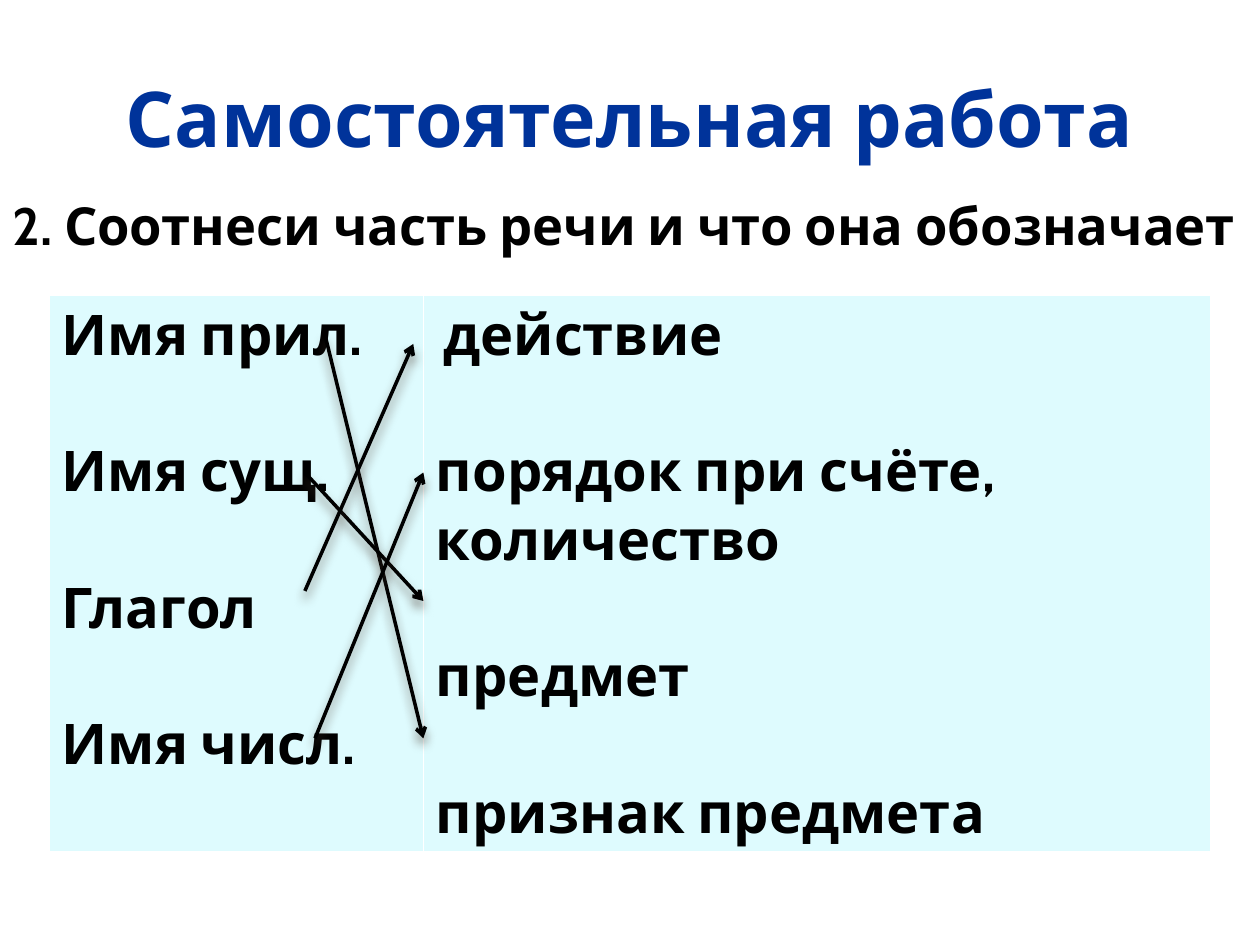
import pptx
import pptx.util
import pptx.dml.color
import pptx.enum.shapes
import pptx.enum.text
import pptx.oxml
import pptx.oxml.ns
from pptx.util import Inches, Pt

TITLE = "Самостоятельная работа"
TASK = "2. Соотнеси часть речи и что она обозначает"
COLUMNS = [
    (2.97, ["Имя прил.", "Имя сущ.", "Глагол", "Имя числ."]),
    (6.25, ["действие", "порядок при счёте, количество", "предмет", "признак предмета"]),
]
FIRST_MEANING_INDENT = 0.06
TABLE_LEFT, TABLE_TOP, TABLE_HEIGHT = 0.39, 2.34, 3.83
ARROWS = [  # from, to
    ((2.58, 2.66), (3.36, 5.86)),
    ((2.42, 3.75), (3.36, 4.77)),
    ((2.42, 4.69), (3.28, 2.73)),
    ((2.5, 5.86), (3.36, 3.75)),
]
THEME = {
    "font": "Cabin", "title": "00339A", "text": "000000", "cell": "DEFBFE",
    "border": "FFFFFF", "shadow": "4E3B30",
    "title_size": 44, "task_size": 30, "cell_size": 32, "line_gap": 39,
}
BORDERS = {"lnL": 1, "lnR": 1, "lnT": 1, "lnB": 3}
NS = pptx.oxml.ns.nsdecls("a")


def rgb(name):
    return pptx.dml.color.RGBColor.from_string(THEME[name])


def write(tf, lines, size, color="text", align=None, gap=0):
    for i, line in enumerate(lines):
        p = tf.paragraphs[0] if i == 0 else tf.add_paragraph()
        if i and gap:
            p.space_before = Pt(gap)
        if align is not None:
            p.alignment = align
        r = p.add_run()
        r.text = line
        r.font.name, r.font.size, r.font.bold = THEME["font"], Pt(size), True
        r.font.color.rgb = rgb(color)


def style_cell(cell):
    cell.fill.solid()
    cell.fill.fore_color.rgb = rgb("cell")
    tcPr = cell._tc.get_or_add_tcPr()
    for i, (tag, width) in enumerate(BORDERS.items()):
        tcPr.insert(i, pptx.oxml.parse_xml(
            f'<a:{tag} {NS} w="{Pt(width)}"><a:solidFill>'
            f'<a:srgbClr val="{THEME["border"]}"/></a:solidFill></a:{tag}>'))


def add_arrow(s, start, end):
    line = s.shapes.add_connector(
        pptx.enum.shapes.MSO_CONNECTOR.STRAIGHT, *map(Inches, start + end))
    line.line.color.rgb = rgb("text")
    line.line.width = Pt(2)
    line.line._get_or_add_ln().append(
        pptx.oxml.parse_xml(f'<a:tailEnd {NS} type="arrow"/>'))
    line._element.spPr.append(pptx.oxml.parse_xml(
        f'<a:effectLst {NS}><a:outerShdw blurRad="{Pt(6)}" dist="{Pt(4)}" '
        f'dir="5400000" rotWithShape="0"><a:srgbClr val="{THEME["shadow"]}">'
        '<a:alpha val="60000"/></a:srgbClr></a:outerShdw></a:effectLst>'))


def add_match_table(s):
    width = sum(w for w, _ in COLUMNS)
    table = s.shapes.add_table(
        1, len(COLUMNS), *map(Inches, (TABLE_LEFT, TABLE_TOP, width, TABLE_HEIGHT))).table
    table.first_row = table.horz_banding = False
    for i, (w, lines) in enumerate(COLUMNS):
        table.columns[i].width = Inches(w)
        cell = table.cell(0, i)
        write(cell.text_frame, lines, THEME["cell_size"], gap=THEME["line_gap"])
        style_cell(cell)
    first = table.cell(0, 1).text_frame.paragraphs[0]
    first._p.get_or_add_pPr().set("marL", str(Inches(FIRST_MEANING_INDENT)))


def main():
    prs = pptx.Presentation()
    prs.slide_width, prs.slide_height = Inches(10), Inches(7.5)
    s = prs.slides.add_slide(prs.slide_layouts[5])

    title = s.shapes.title
    title.left, title.top, title.width, title.height = map(Inches, (0.5, 0.3, 9, 1.25))
    title.text_frame.vertical_anchor = pptx.enum.text.MSO_ANCHOR.MIDDLE
    write(title.text_frame, [TITLE], THEME["title_size"], color="title",
          align=pptx.enum.text.PP_ALIGN.CENTER)

    add_match_table(s)

    tf = s.shapes.add_textbox(*map(Inches, (0, 1.48, 10, 0.61))).text_frame
    tf.word_wrap = True
    tf.auto_size = pptx.enum.text.MSO_AUTO_SIZE.SHAPE_TO_FIT_TEXT
    write(tf, [TASK], THEME["task_size"])

    for start, end in ARROWS:
        add_arrow(s, start, end)
    prs.save("out.pptx")


if __name__ == "__main__":
    main()
